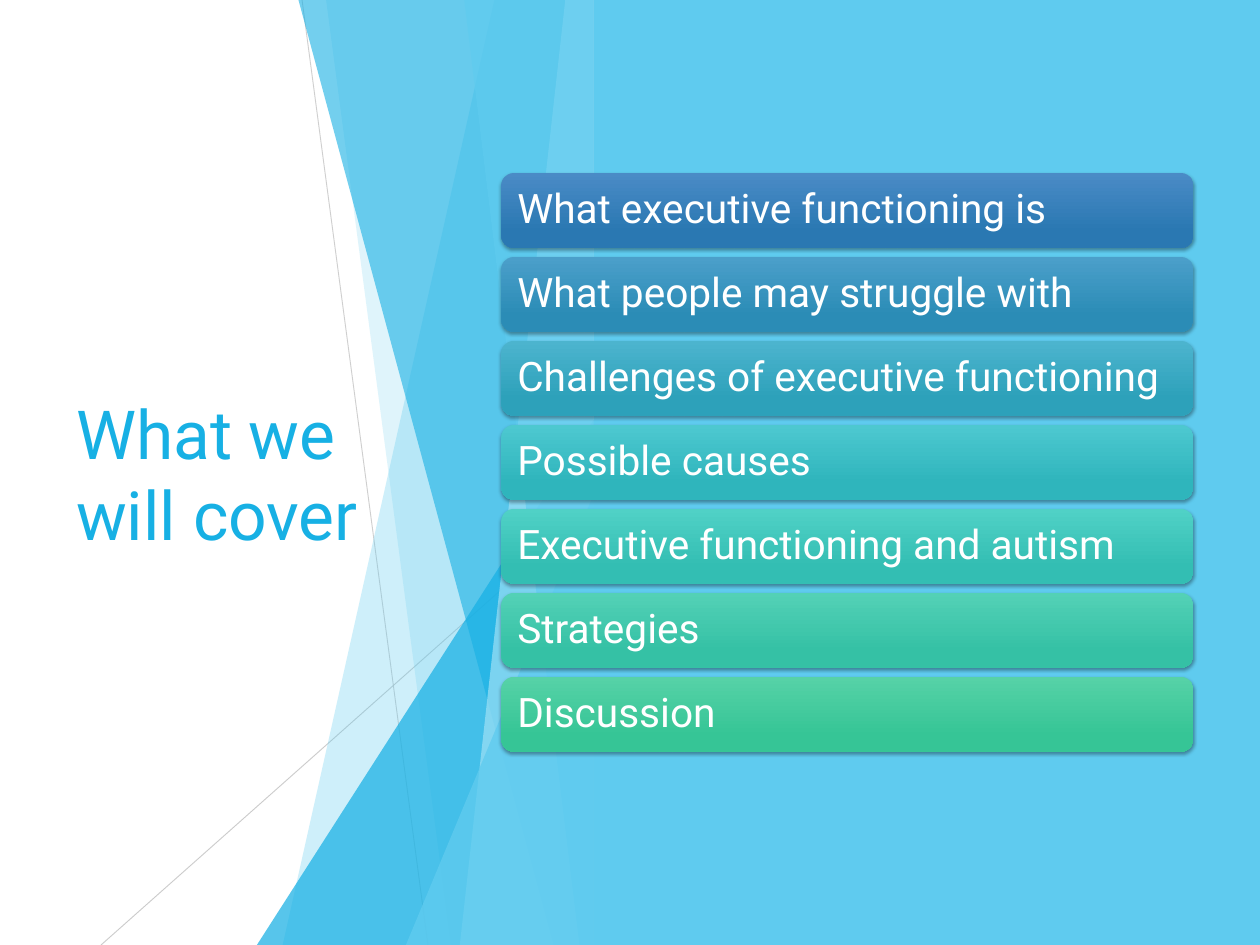
import pptx
import pptx.dml.color
import pptx.enum.shapes
import pptx.enum.text
import pptx.oxml
import pptx.oxml.ns
import pptx.util
from pptx.util import Pt

SHAPE = pptx.enum.shapes.MSO_SHAPE
W, H = 1024, 768
PANEL_X = 482.4
COLORS = {"sky": "5FCBEF", "blue": "17B0E4", "pale": "9FE0F5",
          "grey": "BFBFBF", "white": "FFFFFF"}

# top x, bottom x, colour, opacity
FACETS_BACK = [(401.8, 229.7, "sky", 30), (265, 366.5, "sky", 20)]
FACETS_FRONT = [(242.6, 450, "blue", 60), (459.4, 373.7, "pale", 70),
                (377.3, 470.9, "sky", 65)]

# text, top colour, bottom colour
TOPICS = [
    ("What executive functioning is", "4A8BC6", "2A78B2"),
    ("What people may struggle with", "4B9FCA", "2B8CB6"),
    ("Challenges of executive functioning", "4CB4CE", "2DA1BA"),
    ("Possible causes", "4DC8D0", "2FB5BC"),
    ("Executive functioning and autism", "50D1C6", "33BEB3"),
    ("Strategies", "53D1B6", "35C1A5"),
    ("Discussion", "56D2A7", "36C596"),
]
TOPIC_X, TOPIC_Y, TOPIC_W, TOPIC_H, TOPIC_STEP = 407.5, 140.6, 562.4, 60.8, 68.25

FRAME = {"word_wrap": True,
         "auto_size": pptx.enum.text.MSO_AUTO_SIZE.NONE,
         "vertical_anchor": pptx.enum.text.MSO_ANCHOR.MIDDLE}
TOPIC_FRAME = FRAME | {f"margin_{side}": Pt(10)
                       for side in ("left", "right", "top", "bottom")}


def rgb(value):
    return pptx.dml.color.RGBColor.from_string(value)


def set_all(target, values):
    for name, value in values.items():
        setattr(target, name, value)


def set_opacity(sp, percent):
    for clr in sp._element.spPr.iter(pptx.oxml.ns.qn("a:srgbClr")):
        pptx.oxml.ns.qn("a:alpha")
        clr.append(pptx.oxml.parse_xml(
            f'<a:alpha {pptx.oxml.ns.nsdecls("a")} val="{percent * 1000}"/>'))


def paint(sp, color, opacity=100):
    sp.shadow.inherit = False
    sp.fill.solid()
    sp.fill.fore_color.rgb = rgb(COLORS[color])
    sp.line.fill.background()
    if opacity < 100:
        set_opacity(sp, opacity)


def write(tf, text, frame, size, color, spacing):
    set_all(tf, frame)
    p = tf.paragraphs[0]
    set_all(p, {"alignment": pptx.enum.text.PP_ALIGN.LEFT,
                "line_spacing": spacing})
    r = p.add_run()
    r.text = text
    set_all(r.font, {"name": "Roboto", "size": Pt(size)})
    r.font.color.rgb = rgb(COLORS[color])


def add_thin_line(s, x1, y1, x2, y2, opacity):
    ln = s.shapes.add_connector(pptx.enum.shapes.MSO_CONNECTOR.STRAIGHT,
                                Pt(x1), Pt(y1), Pt(x2), Pt(y2))
    ln.line.color.rgb = rgb(COLORS["grey"])
    ln.line.width = Pt(0.75)
    set_opacity(ln, opacity)
    ln._element.spPr.append(pptx.oxml.parse_xml(
        f'<a:effectLst {pptx.oxml.ns.nsdecls("a")}/>'))


def add_facet(s, top_x, bottom_x, color, opacity):
    """Full-height band between a slanted left edge and the panel."""
    fb = s.shapes.build_freeform(Pt(top_x), 0)
    fb.add_line_segments([(Pt(PANEL_X), 0), (Pt(PANEL_X), Pt(H)),
                          (Pt(bottom_x), Pt(H))])
    paint(fb.convert_to_shape(), color, opacity)


def add_corner(s, x, y, color, opacity):
    """Right triangle standing on the slide's foot against the panel."""
    sp = s.shapes.add_shape(SHAPE.ISOSCELES_TRIANGLE, Pt(x), Pt(y),
                            Pt(PANEL_X - x), Pt(H - y))
    sp.adjustments[0] = 1
    paint(sp, color, opacity)


def add_topic(s, y, text, top_color, bottom_color):
    sp = s.shapes.add_shape(SHAPE.ROUNDED_RECTANGLE, Pt(TOPIC_X), Pt(y),
                            Pt(TOPIC_W), Pt(TOPIC_H))
    sp.line.fill.background()
    sp.fill.gradient()
    sp.fill.gradient_angle = 270
    stops = zip(sp.fill.gradient_stops, (0, 0.78), (top_color, bottom_color))
    for stop, position, color in stops:
        stop.position = position
        stop.color.rgb = rgb(color)
    sp.shadow.inherit = False
    effects = sp._element.spPr.find(pptx.oxml.ns.qn("a:effectLst"))
    effects.append(pptx.oxml.parse_xml(
        f'<a:outerShdw {pptx.oxml.ns.nsdecls("a")} blurRad="{Pt(3)}" '
        f'dist="{Pt(2)}" dir="5400000" rotWithShape="0">'
        '<a:srgbClr val="000000"><a:alpha val="35000"/></a:srgbClr>'
        '</a:outerShdw>'))
    write(sp.text_frame, text, TOPIC_FRAME, 33, "white", 0.9)


def add_title(s, text):
    title = s.shapes.title
    set_all(title, {"left": Pt(54.7), "top": Pt(154.8),
                    "width": Pt(298), "height": Pt(458.6)})
    write(title.text_frame, text, FRAME, 55, "blue", 1.0)
    s.shapes._spTree.append(title._element)  # bring in front of the facets


def main():
    prs = pptx.Presentation()
    set_all(prs, {"slide_width": Pt(W), "slide_height": Pt(H)})
    s = prs.slides.add_slide(prs.slide_layouts[5])

    add_thin_line(s, 245.5, 0, 347.8, H, 75)
    add_thin_line(s, PANEL_X, 412.6, 82.1, H, 80)
    for facet in FACETS_BACK:
        add_facet(s, *facet)
    add_corner(s, 208.8, 341.3, "blue", 72)
    for facet in FACETS_FRONT:
        add_facet(s, *facet)
    add_corner(s, 329.8, 401.8, "sky", 80)

    add_title(s, "What we will cover")
    panel = s.shapes.add_shape(SHAPE.RECTANGLE, Pt(PANEL_X), 0,
                               Pt(W - PANEL_X), Pt(H))
    paint(panel, "sky")
    for i, topic in enumerate(TOPICS):
        add_topic(s, TOPIC_Y + i * TOPIC_STEP, *topic)

    prs.save("out.pptx")


if __name__ == "__main__":
    main()
